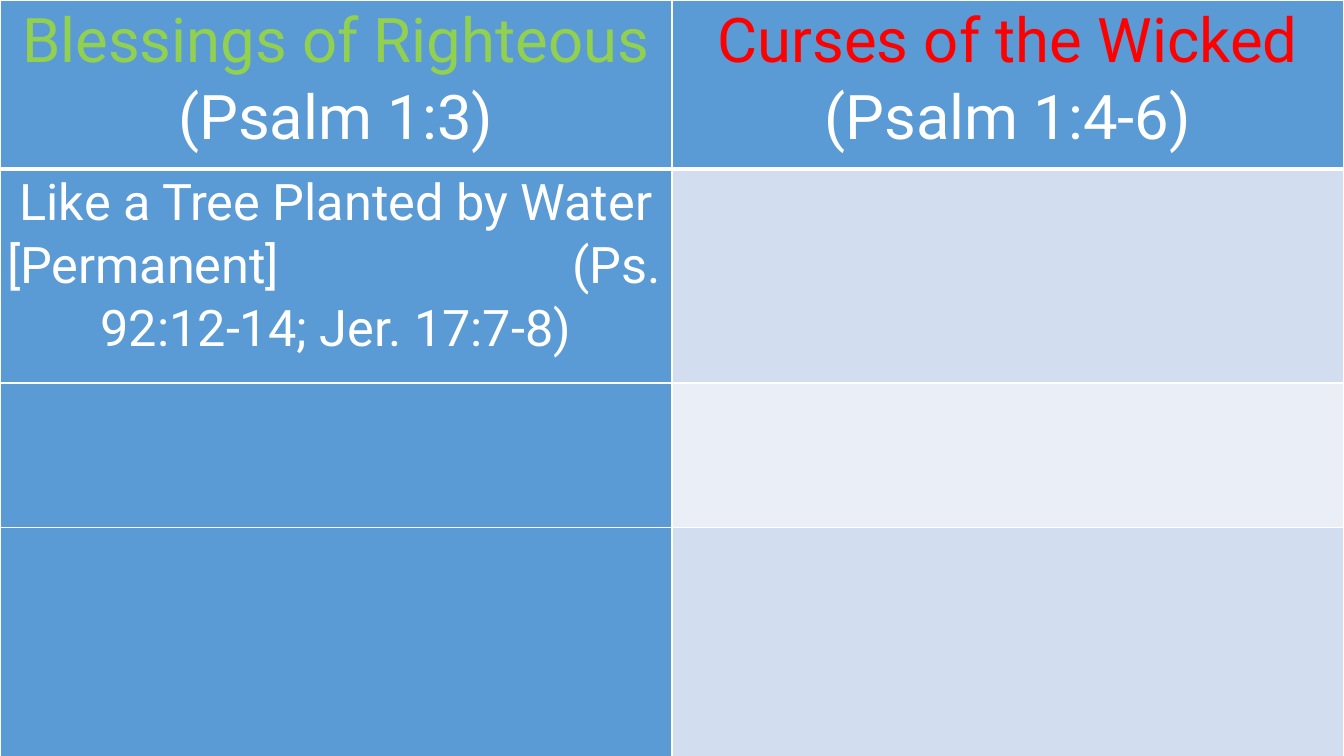
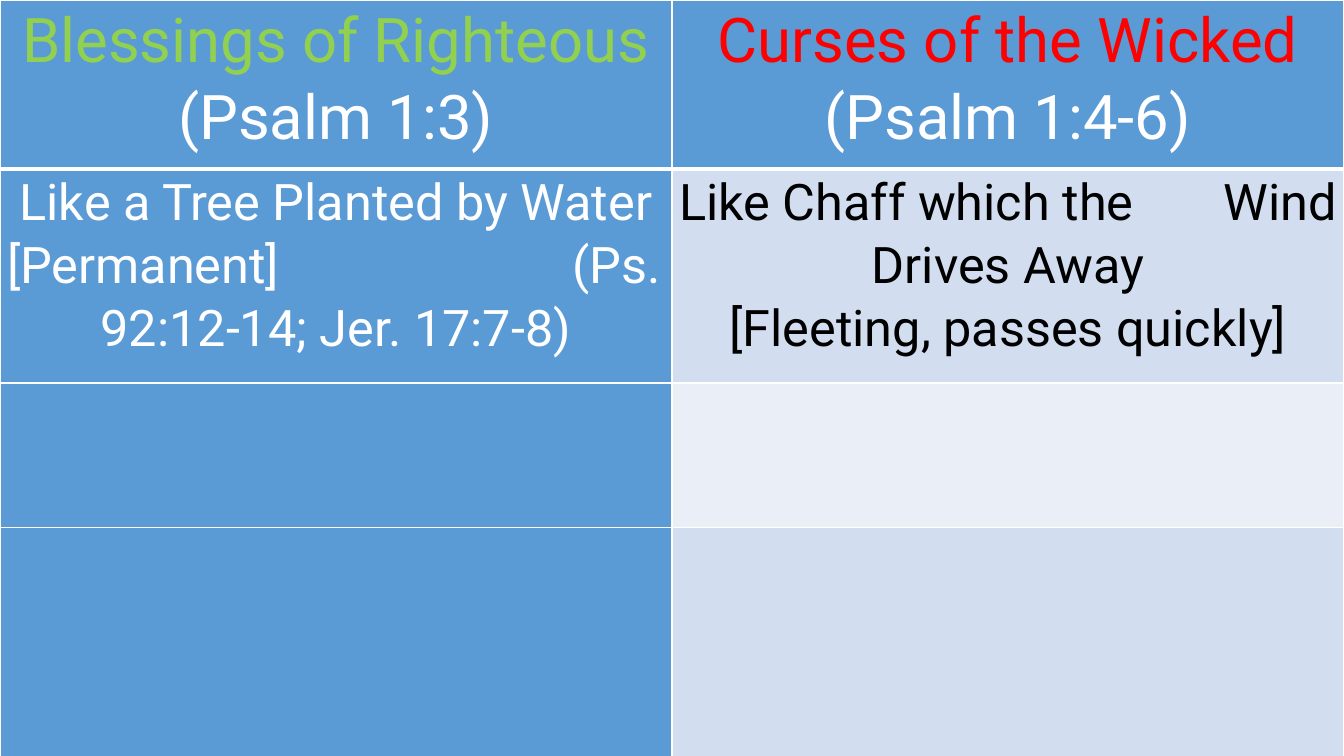
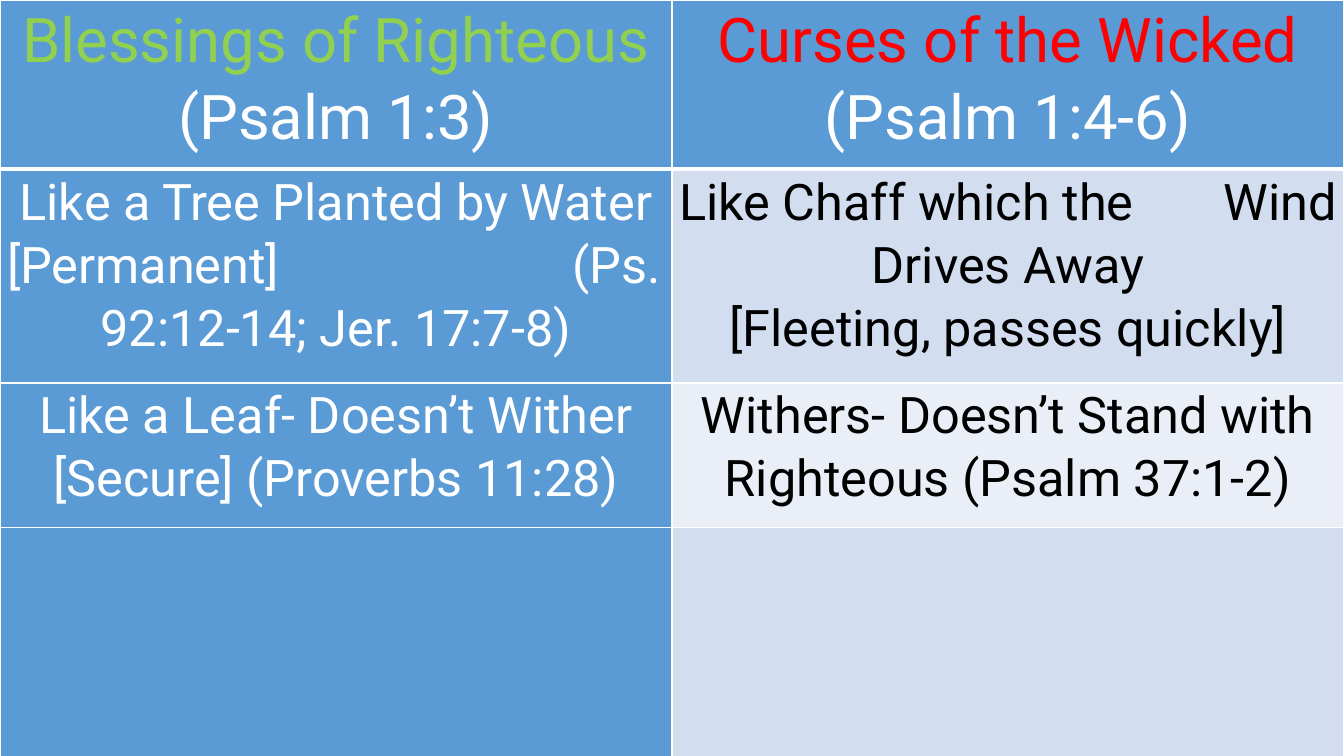
"""Build three slides that reveal a table of blessings and curses step by step."""
from dataclasses import dataclass

from lxml.etree import SubElement
from pptx import Presentation
from pptx.dml.color import RGBColor
from pptx.enum.text import PP_ALIGN as Align
from pptx.oxml.ns import qn
from pptx.util import Inches, Pt

SLIDE_WIDTH, SLIDE_HEIGHT = Inches(13.33), Inches(7.5)
ROW_HEIGHTS = tuple(map(Inches, (1.68, 2.12, 1.43, 2.52)))
COLUMN_COUNT = 2
SIDE_MARGIN = Inches(0.07)

BLACK = RGBColor(0x00, 0x00, 0x00)
WHITE = RGBColor(0xFF, 0xFF, 0xFF)
GREEN = RGBColor(0x92, 0xD0, 0x50)
RED = RGBColor(0xFF, 0x00, 0x00)
BLUE = RGBColor(0x5B, 0x9B, 0xD5)
BANDS = (RGBColor(0xD2, 0xDE, 0xEF), RGBColor(0xEA, 0xEF, 0xF7))

FONT = "Roboto"
HEADER_SIZE, BODY_SIZE = 44, 36
THIN, THICK = Pt(1), Pt(3)


@dataclass(frozen=True)
class Heading:
    title: str
    verses: str
    color: RGBColor


@dataclass(frozen=True)
class Line:
    text: str
    tab: float = 0


HEADINGS = (
    Heading("Blessings of Righteous ", "(Psalm 1:3)", GREEN),
    Heading("Curses of the Wicked ", "(Psalm 1:4-6)", RED),
)
ENTRIES = (
    (
        Line("Like a Tree Planted by Water"),
        Line("[Permanent]\t(Ps.", tab=5.61),
        Line("92:12-14; Jer. 17:7-8)"),
    ),
    (
        Line("Like Chaff which the\tWind", tab=5.4),
        Line("Drives Away"),
        Line("[Fleeting, passes quickly]"),
    ),
    (Line("Like a Leaf- Doesn’t Wither [Secure] (Proverbs 11:28)"),),
    (Line("Withers- Doesn’t Stand with Righteous (Psalm 37:1-2)"),),
)
REVEALED_ENTRIES = (1, 2, 4)


def add_text(paragraph, text: str, *, size: float, color: RGBColor, tab: float = 0) -> None:
    """Append a formatted run, left aligned with a tab stop if one is given."""
    paragraph.alignment = Align.LEFT if tab else Align.CENTER
    paragraph.line_spacing = 1.07
    if tab:
        stops = SubElement(paragraph._p.get_or_add_pPr(), qn("a:tabLst"))
        SubElement(stops, qn("a:tab"), pos=str(Inches(tab)), algn="l")
    run = paragraph.add_run()
    run.text = text
    run.font.name, run.font.size, run.font.bold = FONT, Pt(size), False
    run.font.color.rgb = color


def style_cell(cell, row: int, column: int) -> None:
    """Set the margins, white borders and fill of a cell."""
    cell.margin_left = cell.margin_right = SIDE_MARGIN
    cell.margin_top = cell.margin_bottom = 0
    widths = {
        "L": THIN,
        "R": THIN,
        "T": THICK if row == 1 else THIN,
        "B": THICK if row == 0 else THIN,
    }
    properties = cell._tc.get_or_add_tcPr()
    for side, width in widths.items():
        border = SubElement(properties, qn(f"a:ln{side}"), w=str(width))
        fill = SubElement(border, qn("a:solidFill"))
        SubElement(fill, qn("a:srgbClr"), val=str(WHITE))
    cell.fill.solid()
    is_blue = row == 0 or column == 0
    cell.fill.fore_color.rgb = BLUE if is_blue else BANDS[(row - 1) % len(BANDS)]


def fill_heading(cell, heading: Heading) -> None:
    """Write a coloured title followed by its white verse reference."""
    paragraph = cell.text_frame.paragraphs[0]
    add_text(paragraph, heading.title, size=HEADER_SIZE, color=heading.color)
    add_text(paragraph, heading.verses, size=HEADER_SIZE, color=WHITE)


def fill_entry(cell, lines: tuple[Line, ...], color: RGBColor) -> None:
    """Write the lines of an entry as paragraphs."""
    frame = cell.text_frame
    for index, line in enumerate(lines):
        paragraph = frame.add_paragraph() if index else frame.paragraphs[0]
        add_text(paragraph, line.text, size=BODY_SIZE, color=color, tab=line.tab)


def add_comparison_slide(presentation, revealed: int) -> None:
    """Add a slide whose table shows the first entries in reading order."""
    slide = presentation.slides.add_slide(presentation.slide_layouts[6])
    slide.background.fill.solid()
    slide.background.fill.fore_color.rgb = BLACK
    table = slide.shapes.add_table(
        len(ROW_HEIGHTS), COLUMN_COUNT, 0, 0, SLIDE_WIDTH, sum(ROW_HEIGHTS)
    ).table
    table.first_row = table.horz_banding = False
    for row, height in zip(table.rows, ROW_HEIGHTS):
        row.height = height
    for row in range(len(ROW_HEIGHTS)):
        for column in range(COLUMN_COUNT):
            style_cell(table.cell(row, column), row, column)
    for column, heading in enumerate(HEADINGS):
        fill_heading(table.cell(0, column), heading)
    for index, lines in enumerate(ENTRIES[:revealed]):
        row, column = divmod(index, COLUMN_COUNT)
        fill_entry(table.cell(row + 1, column), lines, BLACK if column else WHITE)


def main() -> None:
    """Build and save the presentation."""
    presentation = Presentation()
    presentation.slide_width, presentation.slide_height = SLIDE_WIDTH, SLIDE_HEIGHT
    for revealed in REVEALED_ENTRIES:
        add_comparison_slide(presentation, revealed)
    presentation.save("out.pptx")


if __name__ == "__main__":
    main()
